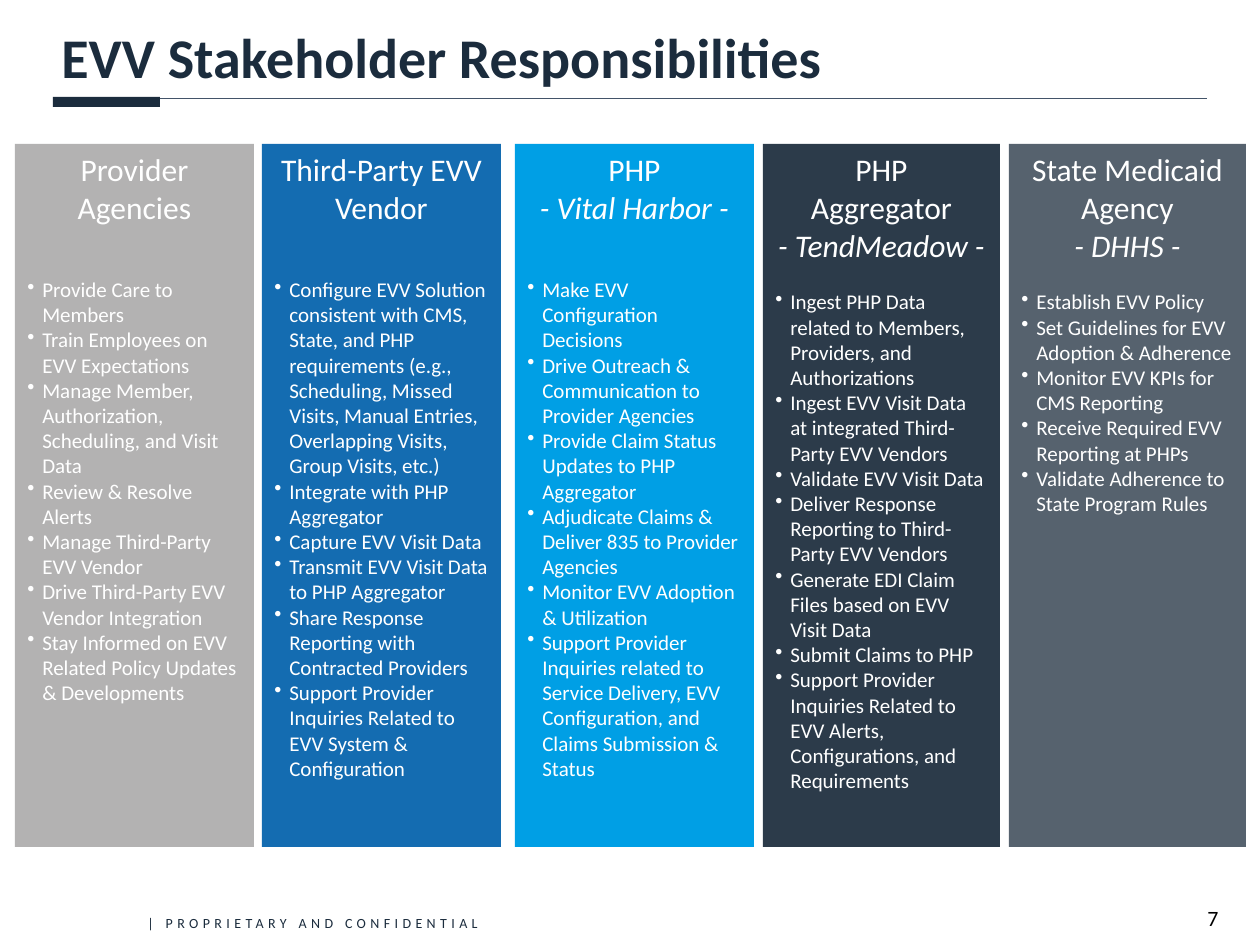
from dataclasses import dataclass

import pptx
import pptx.dml.color
import pptx.enum.shapes
import pptx.enum.text
import pptx.oxml.ns
import pptx.util
from lxml import etree

PX_PER_INCH = 126
ALIGN = pptx.enum.text.PP_ALIGN
ANCHOR = pptx.enum.text.MSO_ANCHOR
SHAPES = pptx.enum.shapes


@dataclass(frozen=True)
class Theme:
    font: str = "Calibri"
    navy: str = "1B2C3D"
    rule: str = "435469"
    white: str = "FFFFFF"
    black: str = "000000"
    gray: str = "B3B2B2"
    blue: str = "146CB1"
    sky: str = "009FE5"
    slate: str = "2C3B4A"
    ink: str = "1C2C3C"
    title: float = 32
    heading: float = 18
    bullet: float = 12
    number: float = 12.5
    footer: float = 8


@dataclass(frozen=True)
class Box:
    left: int
    top: int
    width: int
    height: int


@dataclass(frozen=True)
class Column:
    left: int
    width: int
    fill: str
    heading: list[str]
    duties: list[str]
    subtitle: str = ""
    gap: float = 29  # points between heading and duties
    opacity: int = 100


THEME = Theme()
COLUMN_TOP, COLUMN_HEIGHT = 144, 703

COLUMNS = [
    Column(15, 239, THEME.gray, ["Provider Agencies"], [
        "Provide Care to Members",
        "Train Employees on EVV Expectations",
        "Manage Member, Authorization, Scheduling, and Visit Data",
        "Review & Resolve Alerts",
        "Manage Third-Party EVV Vendor",
        "Drive Third-Party EVV Vendor Integration",
        "Stay Informed on EVV Related Policy Updates & Developments",
    ]),
    Column(262, 239, THEME.blue, ["Third-Party EVV Vendor"], [
        "Configure EVV Solution consistent with CMS, State, and PHP "
        "requirements (e.g., Scheduling, Missed Visits, Manual Entries, "
        "Overlapping Visits, Group Visits, etc.)",
        "Integrate with PHP Aggregator",
        "Capture EVV Visit Data",
        "Transmit EVV Visit Data to PHP Aggregator",
        "Share Response Reporting with Contracted Providers",
        "Support Provider Inquiries Related to EVV System & Configuration",
    ]),
    Column(515, 239, THEME.sky, ["PHP"], [
        "Make EVV Configuration Decisions",
        "Drive Outreach & Communication to Provider Agencies",
        "Provide Claim Status Updates to PHP Aggregator",
        "Adjudicate Claims & Deliver 835 to Provider Agencies",
        "Monitor EVV Adoption & Utilization",
        "Support Provider Inquiries related to Service Delivery, EVV "
        "Configuration, and Claims Submission & Status",
    ], subtitle="- Vital Harbor -"),
    Column(763, 237, THEME.slate, ["PHP", "Aggregator"], [
        "Ingest PHP Data related to Members, Providers, and Authorizations",
        "Ingest EVV Visit Data at integrated Third-Party EVV Vendors",
        "Validate EVV Visit Data",
        "Deliver Response Reporting to Third-Party EVV Vendors",
        "Generate EDI Claim Files based on EVV Visit Data",
        "Submit Claims to PHP",
        "Support Provider Inquiries Related to EVV Alerts, Configurations, "
        "and Requirements",
    ], subtitle="- TendMeadow -", gap=14.5),
    Column(1009, 237, THEME.ink, ["State Medicaid", "Agency"], [
        "Establish EVV Policy",
        "Set Guidelines for EVV Adoption & Adherence",
        "Monitor EVV KPIs for CMS Reporting",
        "Receive Required EVV Reporting at PHPs",
        "Validate Adherence to State Program Rules",
    ], subtitle="- DHHS -", gap=14.5, opacity=74),
]


def px(n: int) -> pptx.util.Emu:
    return pptx.util.Emu(round(n * 914400 / PX_PER_INCH))


def rgb(color: str) -> pptx.dml.color.RGBColor:
    return pptx.dml.color.RGBColor.from_string(color)


def place(box: Box) -> tuple:
    return px(box.left), px(box.top), px(box.width), px(box.height)


def add_run(p, text: str, size: float, color: str, bold=False, italic=False):
    r = p.add_run()
    r.text = text
    r.font.name = THEME.font
    r.font.size = pptx.util.Pt(size)
    r.font.bold = bold
    r.font.italic = italic
    r.font.color.rgb = rgb(color)
    return r


def next_paragraph(tf):
    """Return the first paragraph while it is empty, else a new one."""
    return tf.add_paragraph() if tf.paragraphs[0].runs else tf.paragraphs[0]


def add_rect(slide, box: Box, fill: str, opacity: int = 100):
    sp = slide.shapes.add_shape(SHAPES.MSO_SHAPE.RECTANGLE, *place(box))
    sp.shadow.inherit = False
    sp.fill.solid()
    sp.fill.fore_color.rgb = rgb(fill)
    sp.line.fill.background()
    if opacity < 100:
        clr = sp.fill._xPr.find(".//" + pptx.oxml.ns.qn("a:srgbClr"))
        alpha = etree.SubElement(clr, pptx.oxml.ns.qn("a:alpha"))
        alpha.set("val", str(opacity * 1000))
    return sp


def add_text_box(slide, box: Box):
    tf = slide.shapes.add_textbox(*place(box)).text_frame
    tf.word_wrap = True
    return tf


def add_title(slide, text: str) -> None:
    tf = add_text_box(slide, Box(49, 21, 1135, 79))
    tf.vertical_anchor = ANCHOR.MIDDLE
    p = tf.paragraphs[0]
    p.line_spacing = 0.9
    add_run(p, text, THEME.title, THEME.navy, bold=True)


def add_title_rule(slide) -> None:
    line = slide.shapes.add_connector(
        SHAPES.MSO_CONNECTOR.STRAIGHT, px(53), px(98), px(1207), px(98))
    line.line.color.rgb = rgb(THEME.rule)
    line.line.width = pptx.util.Pt(0.5)
    etree.SubElement(line._element.spPr, pptx.oxml.ns.qn("a:effectLst"))
    add_rect(slide, Box(53, 97, 107, 10), THEME.navy)


def add_duty(tf, text: str):
    p = next_paragraph(tf)
    p.alignment = ALIGN.LEFT
    pPr = p._p.get_or_add_pPr()
    pPr.set("marL", str(px(15)))
    pPr.set("indent", str(-px(15)))
    etree.SubElement(pPr, pptx.oxml.ns.qn("a:buChar")).set("char", "•")
    add_run(p, text, THEME.bullet, THEME.white)
    return p


def add_column(slide, col: Column) -> None:
    box = Box(col.left, COLUMN_TOP, col.width, COLUMN_HEIGHT)
    tf = add_rect(slide, box, col.fill, col.opacity).text_frame
    tf.word_wrap = True
    tf.vertical_anchor = ANCHOR.TOP
    for text in [*col.heading, col.subtitle]:
        if text:
            p = next_paragraph(tf)
            p.alignment = ALIGN.CENTER
            add_run(p, text, THEME.heading, THEME.white, italic=text == col.subtitle)
    duties = [add_duty(tf, text) for text in col.duties]
    duties[0].space_before = pptx.util.Pt(col.gap)


def add_footer(slide, text: str, number: str) -> None:
    tf = add_text_box(slide, Box(135, 908, 370, 30))
    r = add_run(tf.paragraphs[0], text, THEME.footer, THEME.navy)
    r._r.get_or_add_rPr().set("spc", "250")

    tf = add_text_box(slide, Box(1179, 905, 68, 26))
    tf.margin_left = tf.margin_right = tf.margin_top = tf.margin_bottom = 0
    tf.paragraphs[0].alignment = ALIGN.CENTER
    add_run(tf.paragraphs[0], number, THEME.number, THEME.black)


def main() -> None:
    prs = pptx.Presentation()
    prs.slide_width, prs.slide_height = px(1260), px(945)
    s = prs.slides.add_slide(prs.slide_layouts[6])
    add_footer(s, "| PROPRIETARY AND CONFIDENTIAL", "7")
    add_title_rule(s)
    add_title(s, "EVV Stakeholder Responsibilities")
    for col in COLUMNS:
        add_column(s, col)
    prs.save("out.pptx")


if __name__ == "__main__":
    main()
